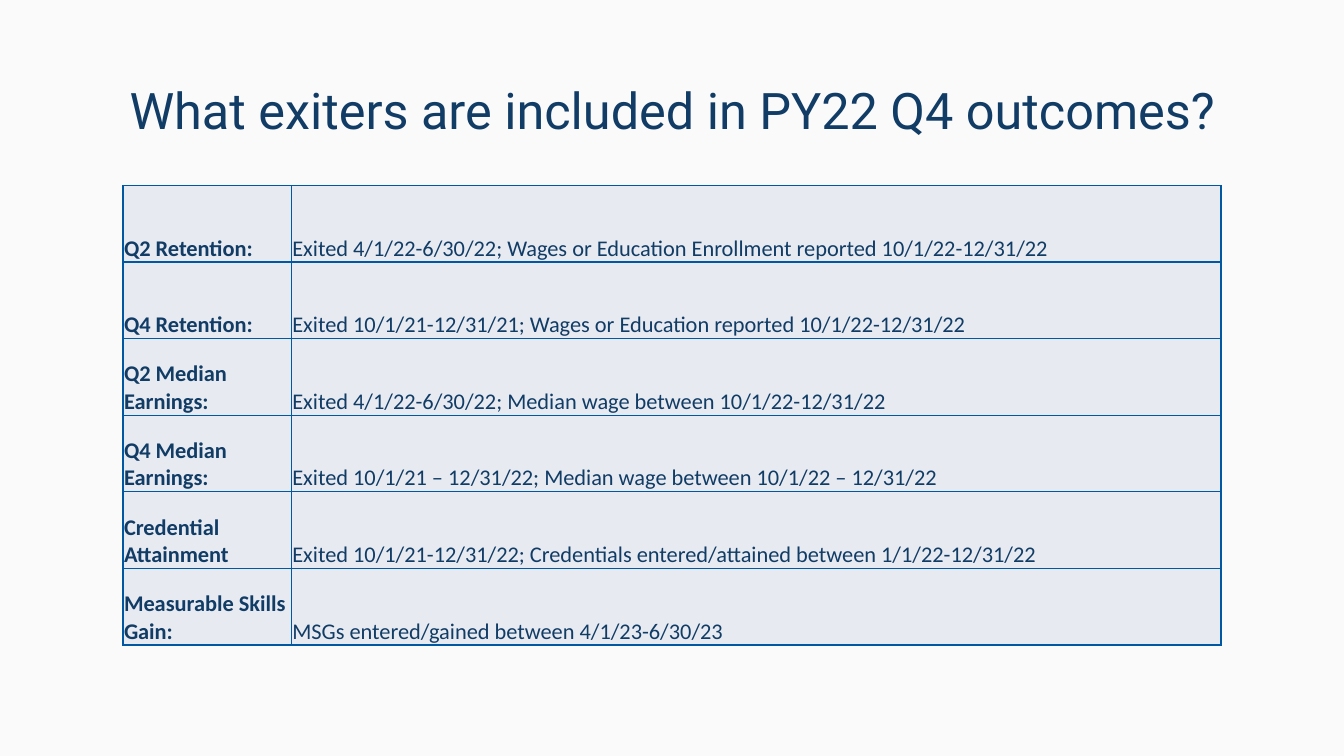
from lxml.etree import SubElement
from pptx import Presentation
from pptx.dml.color import RGBColor
from pptx.enum.text import MSO_ANCHOR, PP_ALIGN
from pptx.oxml.ns import qn
from pptx.util import Inches, Pt

NAVY = RGBColor(0x11, 0x3C, 0x66)
BLUE = RGBColor(0x00, 0x58, 0xA3)
PALE = RGBColor(0xE7, 0xEA, 0xF0)
PAPER = RGBColor(0xFA, 0xFA, 0xFA)

ROWS = [
    ("Q2 Retention:", "Exited 4/1/22-6/30/22; Wages or Education Enrollment reported 10/1/22-12/31/22"),
    ("Q4 Retention:", "Exited 10/1/21-12/31/21; Wages or Education reported 10/1/22-12/31/22"),
    ("Q2 Median Earnings:", "Exited 4/1/22-6/30/22; Median wage between 10/1/22-12/31/22"),
    ("Q4 Median Earnings:", "Exited 10/1/21 – 12/31/22; Median wage between 10/1/22 – 12/31/22"),
    ("Credential Attainment", "Exited 10/1/21-12/31/22; Credentials entered/attained between 1/1/22-12/31/22"),
    ("Measurable Skills Gain:", "MSGs entered/gained between 4/1/23-6/30/23"),
]


class Page:
    head = "Roboto"
    body = "Calibri"

    def __init__(self, deck):
        self.slide = deck.slides.add_slide(deck.slide_layouts[5])
        fill = self.slide.background.fill
        fill.solid()
        fill.fore_color.rgb = PAPER

    def add_text(self, para, text, face, size, bold=False):
        run = para.add_run()
        run.text = text
        font = run.font
        font.name, font.size, font.bold = face, Pt(size), bold
        font.color.rgb = NAVY

    def title(self, text, left, top, width, height):
        shape = self.slide.shapes.title
        shape.left, shape.top = Inches(left), Inches(top)
        shape.width, shape.height = Inches(width), Inches(height)
        frame = shape.text_frame
        frame.word_wrap = True
        frame.vertical_anchor = MSO_ANCHOR.MIDDLE
        para = frame.paragraphs[0]
        para.alignment = PP_ALIGN.CENTER
        para.line_spacing = 0.9
        self.add_text(para, text, self.head, 36)

    def border(self, cell):
        props = cell._tc.get_or_add_tcPr()
        for side in ("a:lnL", "a:lnR", "a:lnT", "a:lnB"):
            line = SubElement(props, qn(side), w=str(Pt(1)))
            paint = SubElement(line, qn("a:solidFill"))
            SubElement(paint, qn("a:srgbClr"), val=str(BLUE))

    def cell(self, cell, text, bold):
        self.border(cell)
        cell.fill.solid()
        cell.fill.fore_color.rgb = PALE
        cell.vertical_anchor = MSO_ANCHOR.BOTTOM
        cell.margin_left = cell.margin_right = cell.margin_top = Inches(0.01)
        cell.margin_bottom = 0
        self.add_text(cell.text_frame.paragraphs[0], text, self.body, 16, bold)

    def table(self, rows, left, top, widths, height):
        frame = self.slide.shapes.add_table(
            len(rows), len(widths), Inches(left), Inches(top),
            Inches(sum(widths)), Inches(height * len(rows)))
        grid = frame.table
        grid.first_row = grid.horz_banding = False
        for col, width in zip(grid.columns, widths):
            col.width = Inches(width)
        for row, texts in zip(grid.rows, rows):
            row.height = Inches(height)
            for i, text in enumerate(texts):
                self.cell(row.cells[i], text, i == 0)


def main():
    deck = Presentation()
    deck.slide_width, deck.slide_height = Inches(13.33), Inches(7.5)
    page = Page(deck)
    page.title("What exiters are included in PY22 Q4 outcomes?", 0.92, 0.4, 11.5, 1.45)
    page.table(ROWS, 1.22, 1.84, (1.67, 9.22), 0.76)
    deck.save("out.pptx")


if __name__ == "__main__":
    main()
